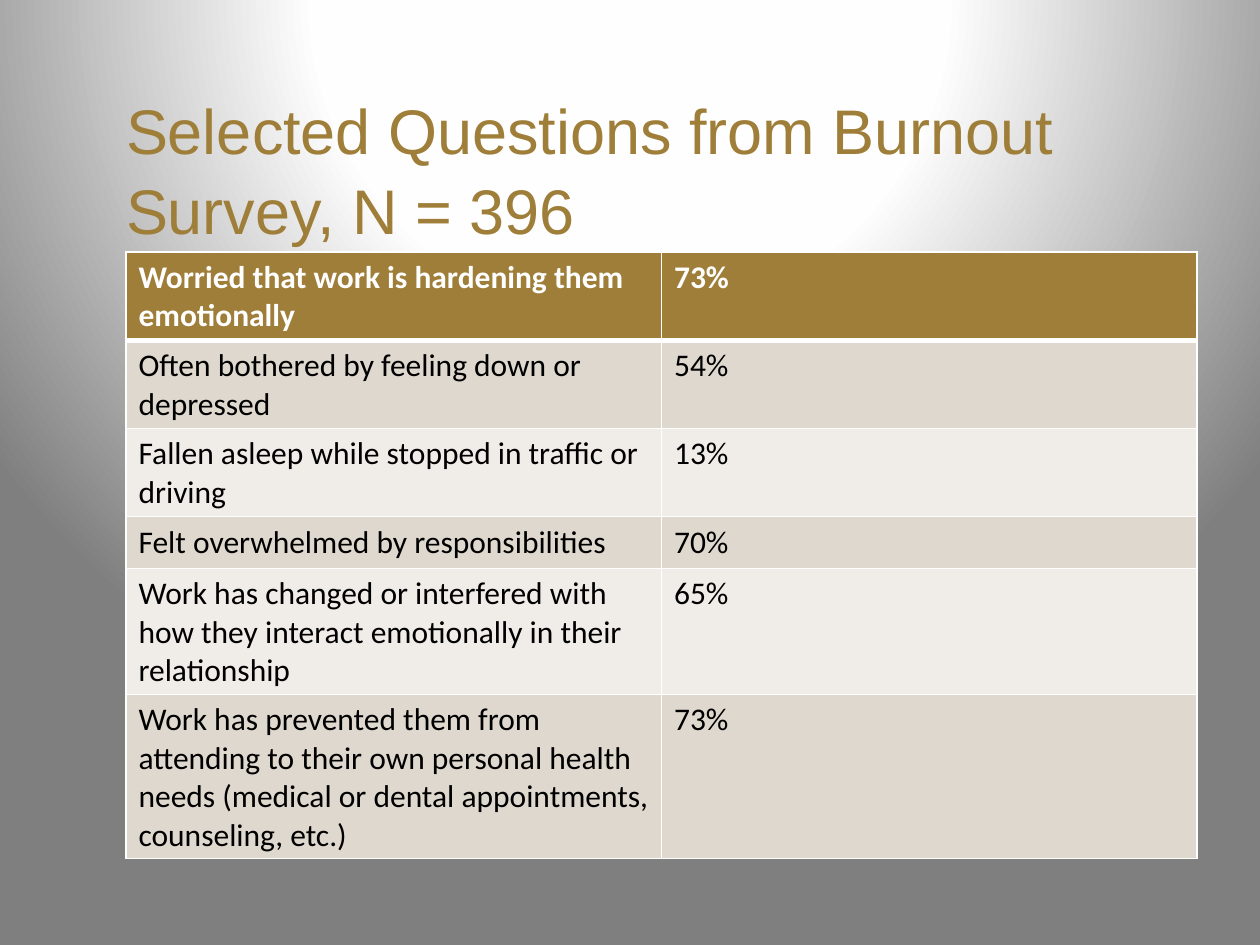
import lxml.etree
import pptx
import pptx.dml.color
import pptx.enum.text
import pptx.oxml
import pptx.oxml.ns
import pptx.util
from pptx.util import Inches

GOLD = "9E7E38"
WHITE = "FFFFFF"
BLACK = "000000"
BANDS = ["DFD8CE", "F0ECE8"]

ROWS = [
    ("Worried that work is hardening them emotionally", "73%"),
    ("Often bothered by feeling down or depressed", "54%"),
    ("Fallen asleep while stopped in traffic or driving", "13%"),
    ("Felt overwhelmed by responsibilities", "70%"),
    ("Work has changed or interfered with how they interact emotionally in their relationship", "65%"),
    ("Work has prevented them from attending to their own personal health needs "
     "(medical or dental appointments, counseling, etc.)", "73%"),
]


def rgb(value):
    return pptx.dml.color.RGBColor.from_string(value)


class Deck:
    title_font = "Arial"
    body_font = "Calibri"

    def __init__(self, prs):
        self.s = prs.slides.add_slide(prs.slide_layouts[5])

    def background(self, stops):
        gs = "".join(
            f'<a:gs pos="{pos * 1000}"><a:srgbClr val="{color}"/></a:gs>'
            for pos, color in stops
        )
        bg = pptx.oxml.parse_xml(
            f'<p:bg {pptx.oxml.ns.nsdecls("p", "a")}><p:bgPr>'
            f'<a:gradFill rotWithShape="1"><a:gsLst>{gs}</a:gsLst>'
            '<a:path path="circle">'
            '<a:fillToRect l="50000" t="-80000" r="50000" b="180000"/>'
            '</a:path></a:gradFill><a:effectLst/></p:bgPr></p:bg>'
        )
        self.s.element.cSld.insert(0, bg)

    def format_runs(self, p, font, size, color, bold=False):
        for r in p.runs:
            r.font.name = font
            r.font.size = pptx.util.Pt(size)
            r.font.bold = bold
            r.font.color.rgb = rgb(color)

    def title(self, text, left, top, width, height):
        sp = self.s.shapes.title
        sp.left, sp.top, sp.width, sp.height = left, top, width, height
        tf = sp.text_frame
        tf.text = text
        tf.word_wrap = True
        tf.auto_size = pptx.enum.text.MSO_AUTO_SIZE.SHAPE_TO_FIT_TEXT
        tf.vertical_anchor = pptx.enum.text.MSO_ANCHOR.BOTTOM
        tf.margin_left = tf.margin_right = tf.margin_top = tf.margin_bottom = 0
        p = tf.paragraphs[0]
        p.alignment = pptx.enum.text.PP_ALIGN.LEFT
        p.line_spacing = 1.05
        self.format_runs(p, self.title_font, 36, GOLD)

    def borders(self, cell, widths):
        tc_pr = cell._tc.get_or_add_tcPr()
        for side, width in zip("LRTB", widths):
            ln = lxml.etree.SubElement(
                tc_pr, pptx.oxml.ns.qn(f"a:ln{side}"), w=str(pptx.util.Pt(width))
            )
            fill = lxml.etree.SubElement(ln, pptx.oxml.ns.qn("a:solidFill"))
            lxml.etree.SubElement(fill, pptx.oxml.ns.qn("a:srgbClr"), val=WHITE)

    def table(self, rows, left, top, width, row_height):
        table = self.s.shapes.add_table(
            len(rows), len(rows[0]), left, top, width, row_height * len(rows)
        ).table
        for i, row in enumerate(rows):
            header = i == 0
            for j, text in enumerate(row):
                cell = table.cell(i, j)
                cell.text = text
                self.borders(cell, (1, 1, 3 if i == 1 else 1, 3 if header else 1))
                cell.fill.solid()
                cell.fill.fore_color.rgb = rgb(GOLD if header else BANDS[(i - 1) % 2])
                self.format_runs(
                    cell.text_frame.paragraphs[0], self.body_font, 18,
                    WHITE if header else BLACK, header,
                )


def main():
    prs = pptx.Presentation()
    prs.slide_width, prs.slide_height = Inches(10), Inches(7.5)
    deck = Deck(prs)
    deck.background([(0, WHITE), (40, "FEFEFE"), (100, "7F7F7F")])
    deck.title("Selected Questions from Burnout Survey, N = 396",
               Inches(1), Inches(0.75), Inches(8.5), Inches(1.21))
    deck.table(ROWS, Inches(1), Inches(2), Inches(8.5), Inches(0.41))
    prs.save("out.pptx")


if __name__ == "__main__":
    main()
